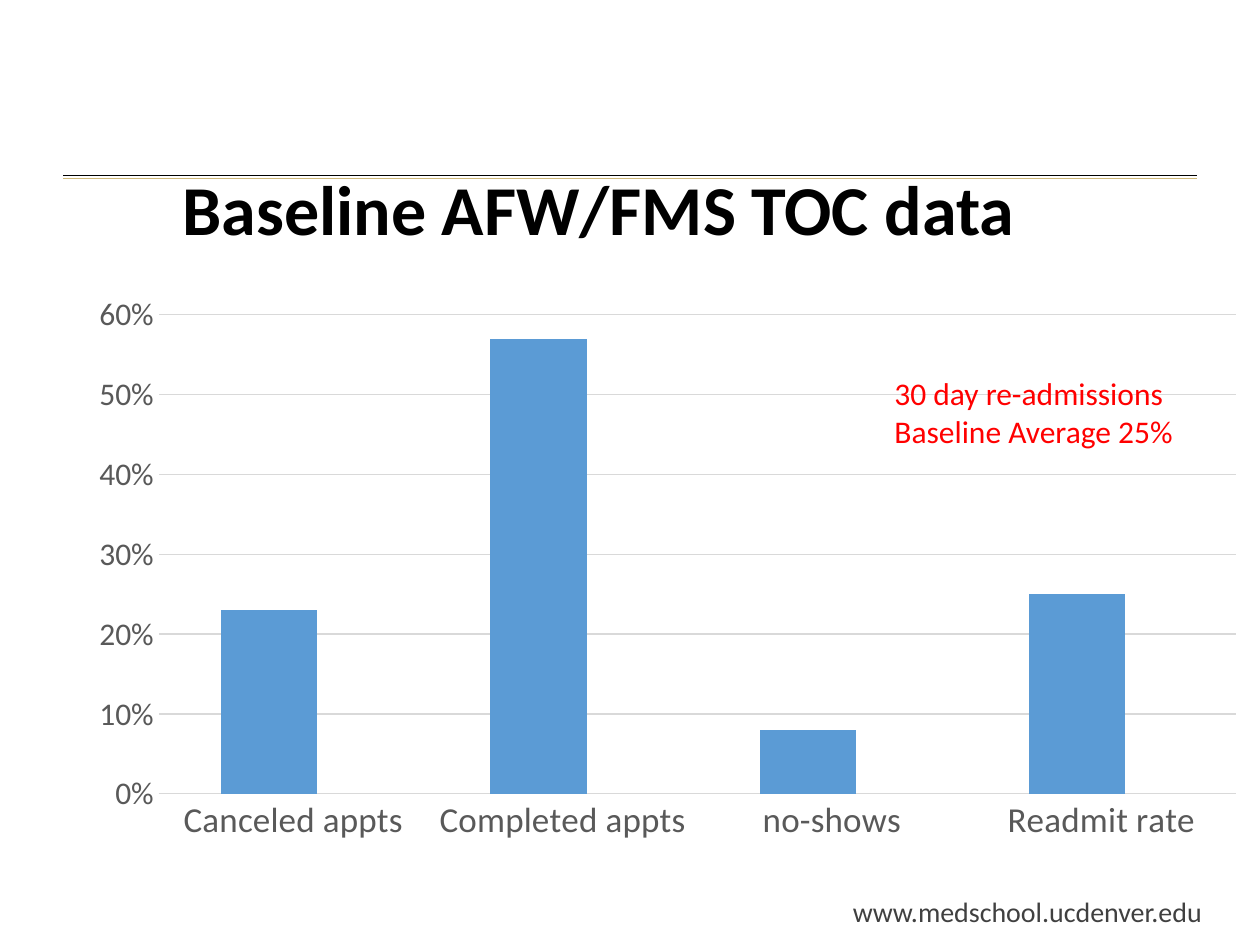
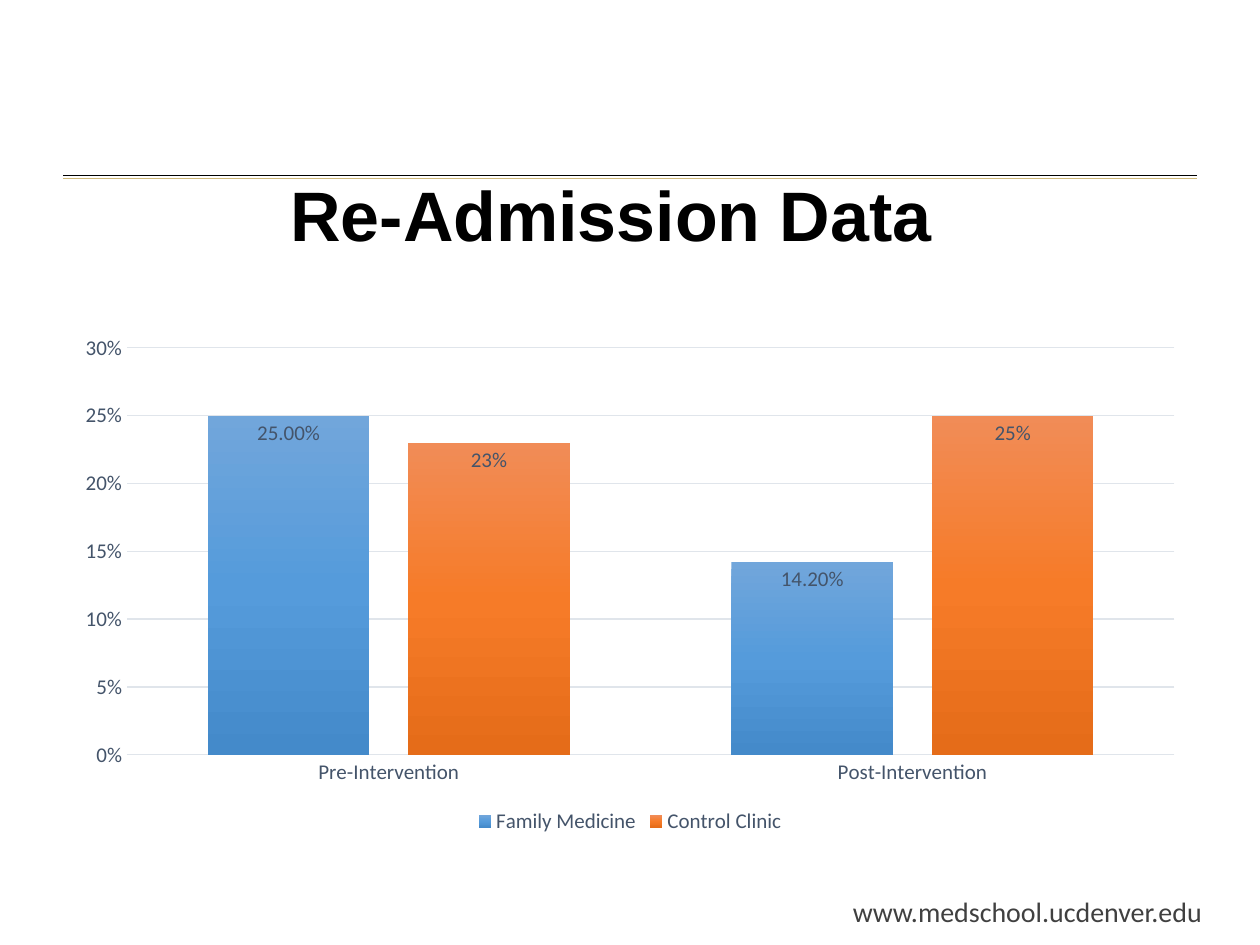
from pptx import Presentation
from pptx.chart.data import CategoryChartData
from pptx.dml.color import RGBColor
from pptx.enum.chart import XL_CHART_TYPE as CHART, XL_LABEL_POSITION as LABEL
from pptx.enum.chart import XL_LEGEND_POSITION as LEGEND, XL_TICK_MARK as TICK
from pptx.enum.shapes import MSO_CONNECTOR as CONN
from pptx.enum.text import MSO_ANCHOR as ANCHOR, MSO_AUTO_SIZE as AUTO, PP_ALIGN as ALIGN
from pptx.oxml import parse_xml
from pptx.oxml.ns import nsdecls, qn
from pptx.util import Inches, Pt

COLORS = {
    "black": "000000", "gold": "CFB879", "footer": "404040", "red": "FF0000",
    "blue": "5B9BD5", "orange": "ED7D31", "gray": "A5A5A5",
    "gray_text": "595959", "gray_line": "D9D9D9",
    "slate_text": "44546A", "slate_line": "E0E5EB",
}
GRADIENTS = {
    "Family Medicine": ("71A6DB", "559BDB", "448ACA"),
    "Control Clinic": ("F18C57", "F67B28", "E56C19"),
}


def rgb(name):
    return RGBColor.from_string(COLORS[name])


def set_font(font, size, color, bold=None, name="Calibri"):
    font.name, font.size, font.bold = name, Pt(size), bold
    font.color.rgb = rgb(color)


def box_inches(box):
    return [Inches(v) for v in box]


def add_rule(slide, y, color):
    line = slide.shapes.add_connector(CONN.STRAIGHT, *box_inches((0.5, y, 9.5, y)))
    line.line.color.rgb = rgb(color)
    line.line.width = Pt(0.5)
    line._element.spPr.append(parse_xml(f"<a:effectLst {nsdecls('a')}/>"))


def add_text(slide, box, lines, size, color, wrap=True):
    tf = slide.shapes.add_textbox(*box_inches(box)).text_frame
    tf.word_wrap = wrap
    tf.text = "\n".join(lines)
    for p in tf.paragraphs:
        set_font(p.font, size, color)


def add_base_slide(prs, title, box, font_name):
    """Add a slide with the double rule, the web address and a title."""
    slide = prs.slides.add_slide(prs.slide_layouts[5])
    add_rule(slide, 1.39, "black")
    add_rule(slide, 1.42, "gold")
    add_text(slide, (6.67, 7.05, 3.67, 0.37), ["www.medschool.ucdenver.edu"], 16, "footer")
    sp = slide.shapes.title
    sp.left, sp.top, sp.width, sp.height = box_inches(box)
    tf = sp.text_frame
    tf.auto_size = AUTO.NONE
    tf.vertical_anchor = ANCHOR.MIDDLE
    tf.text = title
    p = tf.paragraphs[0]
    p.alignment = ALIGN.CENTER
    set_font(p.font, 40, "black", True, font_name)
    return slide


def add_column_chart(slide, box, cats, series, gap, overlap, top, step, sizes, tone):
    """Add clustered columns; sizes are those of category and value labels."""
    data = CategoryChartData(number_format="0%")
    data.categories = cats
    for name, values in series:
        data.add_series(name, values)
    chart = slide.shapes.add_chart(CHART.COLUMN_CLUSTERED, *box_inches(box), data).chart
    set_font(chart.font, 10, "black")
    chart.has_title = chart.has_legend = False
    plot = chart.plots[0]
    plot.gap_width, plot.overlap = gap, overlap
    plot.vary_by_categories = False

    for axis, size in zip((chart.category_axis, chart.value_axis), sizes):
        axis.major_tick_mark = axis.minor_tick_mark = TICK.NONE
        set_font(axis.tick_labels.font, size, f"{tone}_text")
    value_axis = chart.value_axis
    value_axis.minimum_scale, value_axis.maximum_scale = 0, top
    value_axis.major_unit = step
    value_axis.tick_labels.number_format = "0%"
    value_axis.tick_labels.number_format_is_linked = False
    value_axis.format.line.fill.background()
    for line in (chart.category_axis.format.line, value_axis.major_gridlines.format.line):
        line.color.rgb = rgb(f"{tone}_line")
        line.width = Pt(0.75)
    return chart


def set_plot_layout(chart, x, y, w, h):
    """Fix the inner plot area, in fractions of the chart."""
    area = chart._chartSpace.find(".//" + qn("c:plotArea"))
    for old in area.findall(qn("c:layout")):
        area.remove(old)
    sizes = "".join(f'<c:{k} val="{v}"/>' for k, v in zip("xywh", (x, y, w, h)))
    area.insert(0, parse_xml(
        f'<c:layout {nsdecls("c")}><c:manualLayout><c:layoutTarget val="inner"/>'
        f'<c:xMode val="edge"/><c:yMode val="edge"/>{sizes}</c:manualLayout></c:layout>'))


def set_gradient(series, colors):
    """Fill from top to bottom with evenly spaced colours."""
    step = 100000 // (len(colors) - 1)
    stops = "".join(f'<a:gs pos="{i * step}"><a:srgbClr val="{c}"/></a:gs>'
                    for i, c in enumerate(colors))
    series.format.fill.background()
    spPr = series._element.spPr
    spPr.replace(spPr.find(qn("a:noFill")), parse_xml(
        f'<a:gradFill {nsdecls("a")} rotWithShape="1"><a:gsLst>{stops}</a:gsLst>'
        '<a:lin ang="5400000" scaled="0"/></a:gradFill>'))


def add_baseline_slide(prs):
    slide = add_base_slide(prs, "Baseline AFW/FMS TOC data", (0.25, 1.02, 9, 1.25), "Calibri")
    cats = ["Canceled appts", "Completed appts", "no-shows", "Readmit rate"]
    series = [("Series 1", (0.23, 0.57, 0.08, 0.25)),
              ("Series 2", [None] * 4), ("Series 3", [None] * 4)]
    chart = add_column_chart(slide, (0.5, 2.27, 9.5, 4.58), cats, series,
                             129, 75, 0.6, 0.1, (20, 18), "gray")
    set_plot_layout(chart, 0.08, 0.05, 0.9, 0.83)
    for s, color in zip(chart.plots[0].series, ("blue", "orange", "gray")):
        s.format.fill.solid()
        s.format.fill.fore_color.rgb = rgb(color)
    add_text(slide, (7, 2.92, 2.75, 1), ["30 day re-admissions", "Baseline Average 25%"],
             18, "red", wrap=False)


def add_readmission_slide(prs):
    slide = add_base_slide(prs, "Re-Admission Data", (0.35, 1.07, 9, 1.25), "Arial")
    series = [("Family Medicine", (0.25, 0.142)), ("Control Clinic", (0.23, 0.25))]
    chart = add_column_chart(slide, (0.5, 2.58, 9, 4.08),
                             ["Pre-Intervention", "Post-Intervention"], series,
                             100, -24, 0.3, 0.05, (12, 12), "slate")
    chart.has_legend = True
    chart.legend.position = LEGEND.BOTTOM
    chart.legend.include_in_layout = False
    set_font(chart.legend.font, 12, "slate_text")
    for s, number_format in zip(chart.plots[0].series, ("0.00%", "0%")):
        set_gradient(s, GRADIENTS[s.name])
        labels = s.data_labels
        labels.show_value = True
        labels.position = LABEL.INSIDE_END
        labels.number_format = number_format
        labels.number_format_is_linked = False
        set_font(labels.font, 12, "slate_text")


def main():
    prs = Presentation()
    prs.slide_width, prs.slide_height = Inches(10), Inches(7.5)
    add_baseline_slide(prs)
    add_readmission_slide(prs)
    prs.save("out.pptx")


if __name__ == "__main__":
    main()
